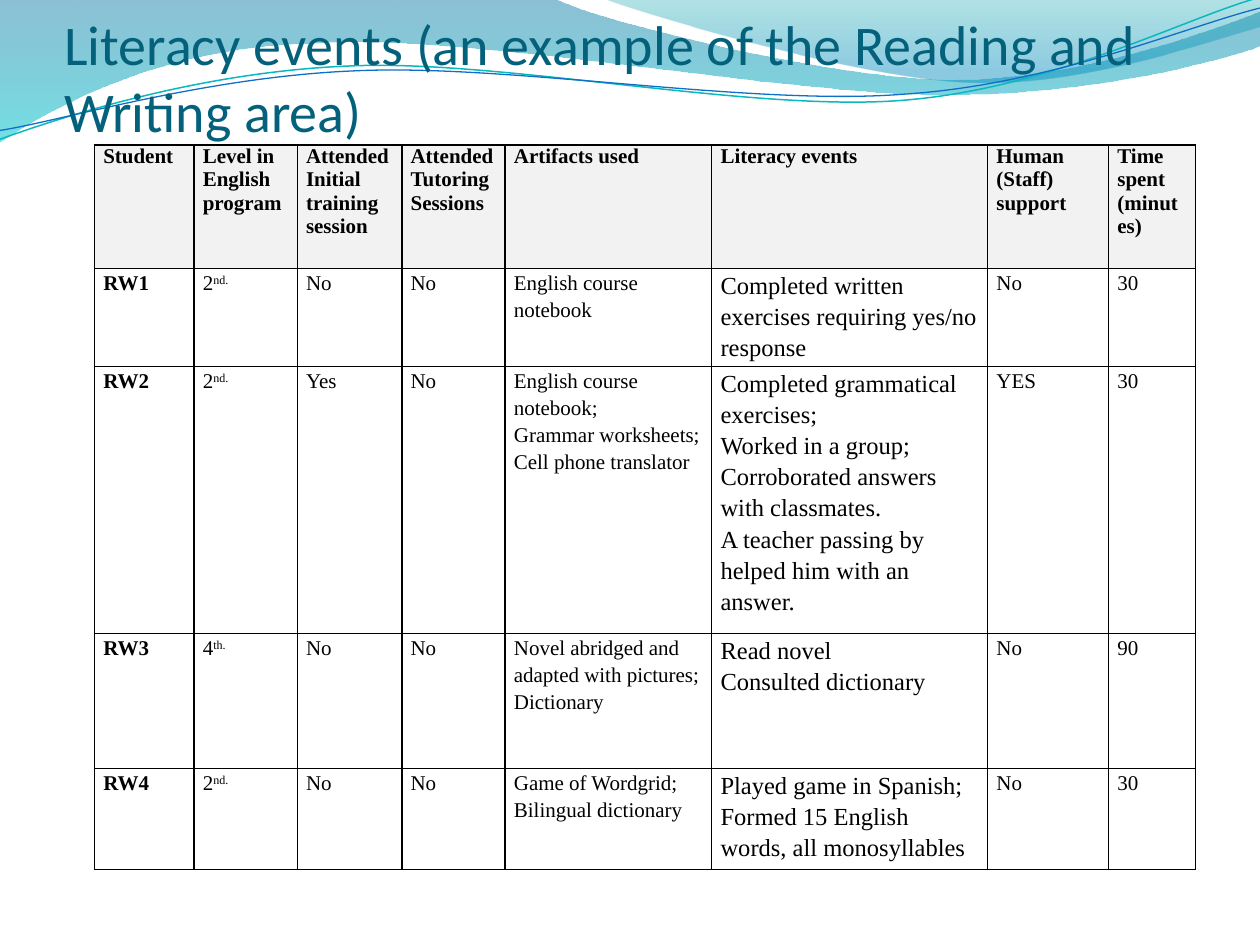
"""Build a slide with a wave banner and a table of literacy events."""
import pptx
import pptx.dml.color
import pptx.enum.text
import pptx.oxml
import pptx.oxml.ns
import pptx.util

Inches, Pt = pptx.util.Inches, pptx.util.Pt
qn = pptx.oxml.ns.qn
space = pptx.oxml.ns.nsdecls("a")


def color(code):
    """Turn a hex string into a colour."""
    return pptx.dml.color.RGBColor.from_string(code)


def wave(shapes, start, parts, close):
    """Draw an outline of lines (2 numbers) and cubic curves (6 numbers)."""
    spots = [(Inches(part[n]), Inches(part[n + 1]))
             for part in parts for n in range(0, len(part), 2)]
    pen = shapes.build_freeform(Inches(start[0]), Inches(start[1]), scale=1.0)
    pen.add_line_segments(spots, close=close)
    shape = pen.convert_to_shape()
    shape.shadow.inherit = False
    lines = iter(list(shape.element.spPr.iter(qn("a:lnTo"))))
    for part in parts:
        first = next(lines)
        if len(part) == 6:
            first.tag = qn("a:cubicBezTo")
            for other in (next(lines), next(lines)):
                first.append(other[0])
                other.getparent().remove(other)
    return shape


deck = pptx.Presentation()
deck.slide_width, deck.slide_height = Inches(10), Inches(7.5)
slide = deck.slides.add_slide(deck.slide_layouts[5])
slide.background.fill.solid()
slide.background.fill.fore_color.rgb = color("FFFFFF")
shapes = slide.shapes

bands = [
    ((0, 0), [(4.4, -0.01), (4.76, 0.17, 6.64, 0.63, 7.58, 0.63),
              (8.53, 0.63, 9.58, 0.26, 10, 0.09), (10.01, 0.36),
              (9.83, 0.44, 8.7, 0.76, 7.46, 0.75), (6.22, 0.75, 3.82, 0.28, 2.57, 0.34),
              (1.29, 0.36, 0.46, 0.83, -0.01, 1.13), (0, 0)],
     [(0, "0074A1", 45), (1, "00C6CF", 55)]),
    ((4.79, -0.01), [(5.09, 0.11, 6.82, 0.62, 7.69, 0.65),
                     (8.56, 0.69, 9.61, 0.32, 10, 0.21), (10, 0), (4.79, -0.01)],
     [(0, "00A1A9", 30), (0.8, "008BBF", 45)]),
]
for start, parts, stops in bands:
    band = wave(shapes, start, parts, True)
    band.line.fill.background()
    band.fill.gradient()
    band.fill.gradient_angle = 270
    for stop, (place, code, alpha) in zip(band.fill.gradient_stops, stops):
        stop.position = place
        stop.color.rgb = color(code)
    for tint, (place, code, alpha) in zip(band.element.spPr.iter(qn("a:srgbClr")), stops):
        tint.append(pptx.oxml.parse_xml(f'<a:alpha {space} val="{alpha * 1000}"/>'))

curves = [
    ((-0.02, 0.87), [(0.47, 0.72, 1.58, 0.41, 2.78, 0.42), (3.96, 0.42, 5.91, 0.93, 7.12, 0.9),
                     (8.32, 0.87, 9.4, 0.36, 10, 0.22)], "0AB8BF", 0.85),
    ((-0.02, 0.8), [(0.46, 0.75, 1.64, 0.45, 2.83, 0.46), (4.03, 0.46, 5.96, 0.89, 7.16, 0.85),
                    (8.35, 0.83, 9.42, 0.42, 10.02, 0.3)], "0F6FC6", 0.75),
]
for start, parts, code, width in curves:
    curve = wave(shapes, start, parts, False)
    curve.rotation = 357.3
    curve.fill.background()
    curve.line.color.rgb = color(code)
    curve.line.width = Pt(width)

title = shapes.title
shapes.element.append(title.element)
title.left, title.top, title.width, title.height = map(Inches, (0.51, 0.44, 9, 0.7))
frame = title.text_frame
frame.auto_size = pptx.enum.text.MSO_AUTO_SIZE.NONE
frame.word_wrap = True
frame.vertical_anchor = pptx.enum.text.MSO_ANCHOR.BOTTOM
frame.margin_left = frame.margin_right = frame.margin_bottom = 0
frame.margin_top = Inches(0.05)
line = frame.paragraphs[0]
line.alignment = pptx.enum.text.PP_ALIGN.LEFT
run = line.add_run()
run.text = "Literacy events (an example of the Reading and Writing area)"
run.font.name, run.font.size = "Calibri", Pt(32)
run.font.color.rgb = color("04617B")

rows = [
    ["Student", "Level in English program", "Attended Initial training\nsession",
     "Attended\nTutoring Sessions", "Artifacts used", "Literacy events",
     "Human (Staff) support", "Time\nspent\n(minutes)"],
    ["RW1", "2^nd.", "No", "No", "English course notebook",
     "Completed written exercises requiring yes/no response", "No", "30"],
    ["RW2", "2^nd.", "Yes", "No",
     "English course notebook;\nGrammar worksheets;\nCell phone translator",
     "Completed grammatical exercises;\nWorked in a group;\n"
     "Corroborated answers with classmates.\n"
     "A teacher passing by helped him with an answer.", "YES", "30"],
    ["RW3", "4^th.", "No", "No", "Novel abridged and adapted with pictures;\nDictionary",
     "Read novel\nConsulted dictionary", "No", "90"],
    ["RW4", "2^nd.", "No", "No", "Game of Wordgrid;\nBilingual dictionary",
     "Played game in Spanish;\nFormed 15 English words, all monosyllables", "No", "30"],
]
widths = [0.79, 0.82, 0.83, 0.82, 1.64, 2.19, 0.96, 0.69]
heights = [0.98, 0.78, 2.12, 1.07, 0.8]
table = shapes.add_table(len(rows), len(widths), Inches(0.75), Inches(1.15),
                         Inches(sum(widths)), Inches(sum(heights))).table
table.first_row = table.horz_banding = False
for col, width in zip(table.columns, widths):
    col.width = Inches(width)
for row, height in zip(table.rows, heights):
    row.height = Inches(height)

for i, row in enumerate(rows):
    for j, text in enumerate(row):
        cell = table.cell(i, j)
        cell.margin_left = cell.margin_right = Inches(0.07)
        cell.margin_top = cell.margin_bottom = 0
        props = cell._tc.get_or_add_tcPr()
        for side in ("lnL", "lnR", "lnT", "lnB"):
            props.append(pptx.oxml.parse_xml(
                f'<a:{side} {space} w="12700"><a:solidFill>'
                f'<a:srgbClr val="000000"/></a:solidFill></a:{side}>'))
        if i == 0:
            cell.fill.solid()
            cell.fill.fore_color.rgb = color("F2F2F2")
        else:
            cell.fill.background()
        for n, words in enumerate(text.split("\n")):
            line = cell.text_frame.add_paragraph() if n else cell.text_frame.paragraphs[0]
            line.line_spacing = 1.15 if i else 1.0
            for k, piece in enumerate(words.split("^")):
                run = line.add_run()
                run.text = piece
                run.font.name = "Times New Roman"
                run.font.size = Pt(14 if i and j == 5 else 12)
                run.font.bold = i == 0 or j == 0
                run.font.color.rgb = color("000000")
                if k:
                    run.font._element.set("baseline", "30000")

deck.save("out.pptx")
